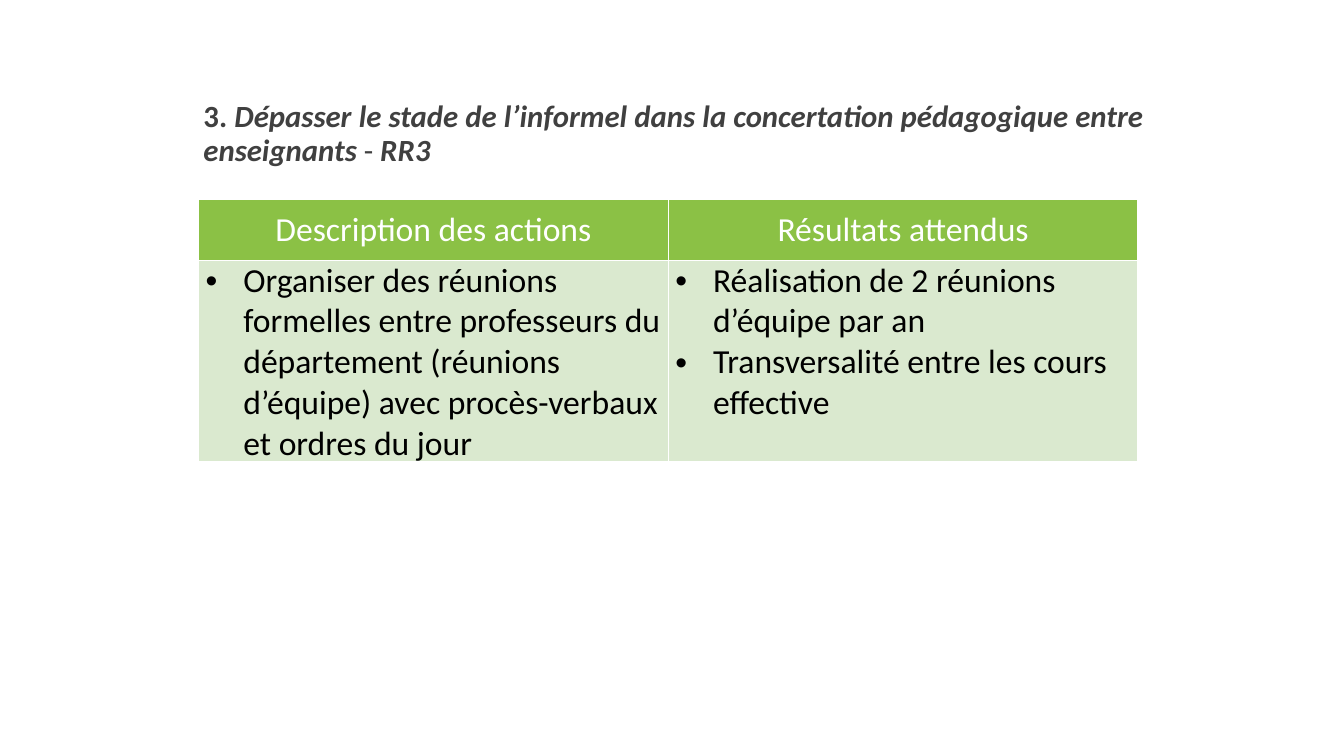
from typing import NamedTuple

from lxml import etree
from pptx import Presentation
from pptx import util as u
from pptx.dml.color import RGBColor
from pptx.enum import text
from pptx.oxml import ns

WHITE = RGBColor(0xFF, 0xFF, 0xFF)
BLACK = RGBColor(0x00, 0x00, 0x00)
GREY = RGBColor(0x40, 0x40, 0x40)
GREEN = RGBColor(0x8B, 0xC1, 0x45)
PALE_GREEN = RGBColor(0xDA, 0xE9, 0xCF)
FONT = "Calibri"
BULLET_INDENT = u.Pt(27)


class Column(NamedTuple):
    heading: str
    items: list[str]


class TitlePart(NamedTuple):
    words: str
    bold: bool
    italic: bool


TITLE = [
    TitlePart("3. ", True, False),
    TitlePart("Dépasser le stade de l’informel dans la concertation pédagogique "
              "entre enseignants", True, True),
    TitlePart(" - ", False, False),
    TitlePart("RR3", True, True),
]
COLUMNS = [
    Column("Description des actions", [
        "Organiser des réunions formelles entre professeurs du département "
        "(réunions d’équipe) avec procès-verbaux et ordres du jour",
    ]),
    Column("Résultats attendus", [
        "Réalisation de 2 réunions d’équipe par an",
        "Transversalité entre les cours effective",
    ]),
]


def add_text(para, words: str, *, size: float = 24, color: RGBColor = BLACK,
             bold: bool = False, italic: bool = False) -> None:
    span = para.add_run()
    span.text = words
    font = span.font
    font.name, font.size, font.bold, font.italic = FONT, u.Pt(size), bold, italic
    font.color.rgb = color


def add_bullet(para) -> None:
    properties = para._p.get_or_add_pPr()
    properties.set("marL", str(BULLET_INDENT))
    properties.set("indent", str(-BULLET_INDENT))
    etree.SubElement(properties, ns.qn("a:buFont"), typeface="Arial")
    etree.SubElement(properties, ns.qn("a:buChar"), char="•")


def format_cell(cell, fill: RGBColor, side: float, top: float) -> None:
    cell.margin_left = cell.margin_right = u.Pt(side)
    cell.margin_top = cell.margin_bottom = u.Pt(top)
    properties = cell._tc.get_or_add_tcPr()
    for edge in ("a:lnL", "a:lnR", "a:lnT", "a:lnB"):
        line = etree.SubElement(properties, ns.qn(edge), w=str(u.Pt(1)))
        paint = etree.SubElement(line, ns.qn("a:solidFill"))
        etree.SubElement(paint, ns.qn("a:srgbClr"), val=str(WHITE))
    cell.fill.solid()
    cell.fill.fore_color.rgb = fill


def add_title(page) -> None:
    box = page.shapes.add_textbox(u.Pt(138.24), u.Pt(54), u.Pt(685.44), u.Pt(84.24))
    frame = box.text_frame
    frame.word_wrap = True
    frame.vertical_anchor = text.MSO_ANCHOR.MIDDLE
    para = frame.paragraphs[0]
    para.alignment = text.PP_ALIGN.JUSTIFY
    para.line_spacing = 0.9
    for part in TITLE:
        add_text(para, part.words, size=22, color=GREY,
                 bold=part.bold, italic=part.italic)


def add_action_table(page) -> None:
    table = page.shapes.add_table(2, len(COLUMNS), u.Pt(141.84), u.Pt(142.56),
                                  u.Pt(671.04), u.Pt(187.2)).table
    table.horz_banding = False
    table.first_row = False
    table.rows[0].height, table.rows[1].height = u.Pt(43.2), u.Pt(144)

    for index, column in enumerate(COLUMNS):
        # Heading
        heading = table.cell(0, index)
        format_cell(heading, GREEN, side=7.2, top=7.2)
        para = heading.text_frame.paragraphs[0]
        para.alignment = text.PP_ALIGN.CENTER
        add_text(para, column.heading, color=WHITE)

        # Bulleted items
        body = table.cell(1, index)
        format_cell(body, PALE_GREEN, side=5.04, top=0)
        frame = body.text_frame
        for number, item in enumerate(column.items):
            para = frame.add_paragraph() if number else frame.paragraphs[0]
            add_bullet(para)
            add_text(para, item)


def main() -> None:
    deck = Presentation()
    deck.slide_width, deck.slide_height = u.Pt(960), u.Pt(540)
    page = deck.slides.add_slide(deck.slide_layouts[6])
    add_title(page)
    add_action_table(page)
    deck.save("out.pptx")


if __name__ == "__main__":
    main()
